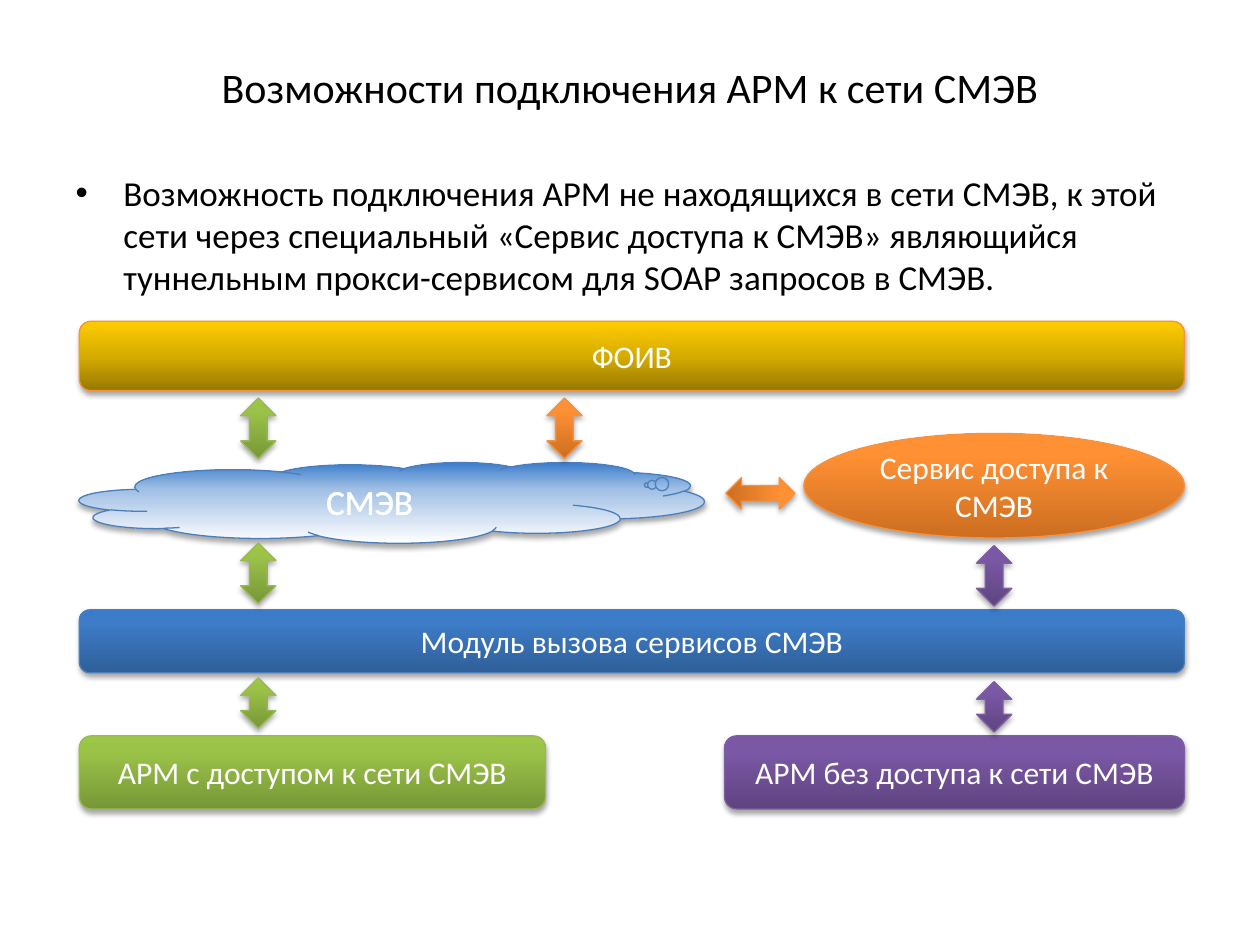
from dataclasses import dataclass

from lxml import etree
from pptx import Presentation
from pptx.dml.color import RGBColor
from pptx.enum.shapes import MSO_SHAPE
from pptx.enum.text import MSO_ANCHOR, PP_ALIGN
from pptx.oxml import parse_xml
from pptx.oxml.ns import nsdecls
from pptx.util import Inches, Pt

BOX = MSO_SHAPE.ROUNDED_RECTANGLE
ARROW = MSO_SHAPE.UP_DOWN_ARROW
OVAL = MSO_SHAPE.OVAL
CLOUD = MSO_SHAPE.CLOUD_CALLOUT
CENTER = PP_ALIGN.CENTER
LEFT = PP_ALIGN.LEFT
MIDDLE = MSO_ANCHOR.MIDDLE


@dataclass(frozen=True)
class Style:
    """Gradient stops from bottom to top, and the line colour."""
    stops: tuple[tuple[int, str], ...]
    line: str


@dataclass(frozen=True)
class Theme:
    font: str = "Calibri"
    dark: str = "000000"
    light: str = "FFFFFF"
    title_size: int = 24
    body_size: int = 20
    label_size: int = 18
    line_width: float = 0.75
    sky: Style = Style(((0, "FFFFFF"), (67, "A0BFE4"), (100, "3A7CCB")), "4B7EBC")
    blue: Style = Style(((0, "2F5F99"), (80, "3D7CC7"), (100, "3A7CCB")), "4B7EBC")
    green: Style = Style(((0, "779737"), (80, "9BC348"), (100, "9DC746")), "98B955")
    purple: Style = Style(((0, "5F4480"), (80, "7B58A6"), (100, "7C57A8")), "7D60A0")
    gold: Style = Style(((0, "977900"), (50, "D7AC00"), (100, "FFCC00")), "F69240")
    orange: Style = Style(((0, "CC6E20"), (80, "FF9034"), (100, "FF9136")), "F69240")


THEME = Theme()


@dataclass(frozen=True)
class Node:
    kind: int
    left: float
    top: float
    width: float
    height: float
    style: Style
    text: str = ""
    size: int = THEME.label_size
    rotation: int = 0


# Shared edges and arrow columns of the diagram
EDGE_LEFT, EDGE_RIGHT = 0.63, 9.4
FULL_WIDTH = EDGE_RIGHT - EDGE_LEFT
ARROW_WIDTH = 0.28
GREEN_X, ORANGE_X, PURPLE_X = 1.91, 4.34, 7.75
LONG, SHORT = 0.48, 0.4


def vertical_arrow(left: float, top: float, height: float, style: Style) -> Node:
    return Node(ARROW, left, top, ARROW_WIDTH, height, style)


NODES = (
    Node(CLOUD, EDGE_LEFT, 3.67, 4.96, 0.64, THEME.sky, "СМЭВ", THEME.body_size),
    Node(BOX, EDGE_LEFT, 4.84, FULL_WIDTH, 0.5, THEME.blue,
         "Модуль вызова сервисов СМЭВ"),
    vertical_arrow(GREEN_X, 4.31, LONG, THEME.green),
    vertical_arrow(PURPLE_X, 4.33, LONG, THEME.purple),
    Node(BOX, EDGE_LEFT, 2.55, FULL_WIDTH, 0.55, THEME.gold, "ФОИВ"),
    vertical_arrow(GREEN_X, 3.16, LONG, THEME.green),
    vertical_arrow(ORANGE_X, 3.16, LONG, THEME.orange),
    Node(BOX, EDGE_LEFT, 5.84, 3.7, 0.58, THEME.green,
         "АРМ с доступом к сети СМЭВ"),
    vertical_arrow(GREEN_X, 5.38, SHORT, THEME.green),
    Node(BOX, 5.75, 5.84, 3.65, 0.58, THEME.purple,
         "АРМ без доступа к сети СМЭВ"),
    vertical_arrow(PURPLE_X, 5.41, SHORT, THEME.purple),
    Node(OVAL, 6.38, 3.44, 3.02, 0.83, THEME.orange, "Сервис доступа к СМЭВ"),
    Node(ARROW, 5.91, 3.64, 0.25, 0.55, THEME.orange, rotation=90),
)


def write_text(shape, text: str, *, size: int, color: str, align=CENTER, anchor=None):
    """Put one formatted paragraph in a shape and return its run."""
    frame = shape.text_frame
    frame.word_wrap = True
    if anchor is not None:
        frame.vertical_anchor = anchor
    para = frame.paragraphs[0]
    para.alignment = align
    span = para.add_run()
    span.text = text
    span.font.name = THEME.font
    span.font.size = Pt(size)
    span.font.color.rgb = RGBColor.from_string(color)
    return span


def place(shape, left: float, top: float, width: float, height: float) -> None:
    shape.left, shape.top = Inches(left), Inches(top)
    shape.width, shape.height = Inches(width), Inches(height)


def apply_style(shape, style: Style) -> None:
    """Set the line, the upward gradient and the soft shadow below."""
    shape.line.color.rgb = RGBColor.from_string(style.line)
    shape.line.width = Pt(THEME.line_width)
    stops = "".join(
        f'<a:gs pos="{position * 1000}"><a:srgbClr val="{color}"/></a:gs>'
        for position, color in style.stops)
    shape.line._get_or_add_ln().addprevious(parse_xml(
        f'<a:gradFill {nsdecls("a")} rotWithShape="1"><a:gsLst>{stops}</a:gsLst>'
        '<a:lin ang="16200000" scaled="0"/></a:gradFill>'))
    shape._element.spPr.append(parse_xml(
        f'<a:effectLst {nsdecls("a")}><a:outerShdw blurRad="{Pt(3.1)}" '
        f'dist="{Pt(1.8)}" dir="5400000" rotWithShape="0">'
        f'<a:srgbClr val="{THEME.dark}"><a:alpha val="35000"/></a:srgbClr>'
        '</a:outerShdw></a:effectLst>'))


def outline_text(span, color: str, width: float) -> None:
    span.font._element.insert(0, parse_xml(
        f'<a:ln {nsdecls("a")} w="{Pt(width)}"><a:solidFill>'
        f'<a:srgbClr val="{color}"/></a:solidFill></a:ln>'))


def draw_node(group, node: Node) -> None:
    shape = group.shapes.add_shape(
        node.kind, Inches(node.left), Inches(node.top),
        Inches(node.width), Inches(node.height))
    shape.rotation = node.rotation
    apply_style(shape, node.style)
    if node.text:
        span = write_text(shape, node.text, size=node.size,
                          color=THEME.light, anchor=MIDDLE)
    if node.kind == CLOUD:
        shape.adjustments[0], shape.adjustments[1] = 0.408, -0.218
        outline_text(span, THEME.light, 1.45)


def add_bullet(para, indent: float) -> None:
    properties = para._p.get_or_add_pPr()
    properties.set("marL", str(Inches(indent)))
    properties.set("indent", str(-Inches(indent)))
    bullet = etree.SubElement(properties, properties.tag.replace("pPr", "buChar"))
    bullet.set("char", "•")


def main() -> None:
    deck = Presentation()
    deck.slide_width, deck.slide_height = Inches(10), Inches(7.5)
    page = deck.slides.add_slide(deck.slide_layouts[1])

    # Title and introduction
    title, body = page.shapes.title, page.placeholders[1]
    place(title, 0.5, 0.3, 9, 0.77)
    write_text(title, "Возможности подключения АРМ к сети СМЭВ",
               size=THEME.title_size, color=THEME.dark, anchor=MIDDLE)
    place(body, 0.5, 1.31, 9, 5.91)
    write_text(body, "Возможность подключения АРМ не находящихся в сети СМЭВ, "
               "к этой сети через специальный «Сервис доступа к СМЭВ» являющийся "
               "туннельным прокси-сервисом для SOAP запросов в СМЭВ.",
               size=THEME.body_size, color=THEME.dark, align=LEFT)
    add_bullet(body.text_frame.paragraphs[0], 0.38)

    # Connection diagram
    diagram = page.shapes.add_group_shape()
    for node in NODES:
        draw_node(diagram, node)

    deck.save("out.pptx")


if __name__ == "__main__":
    main()
